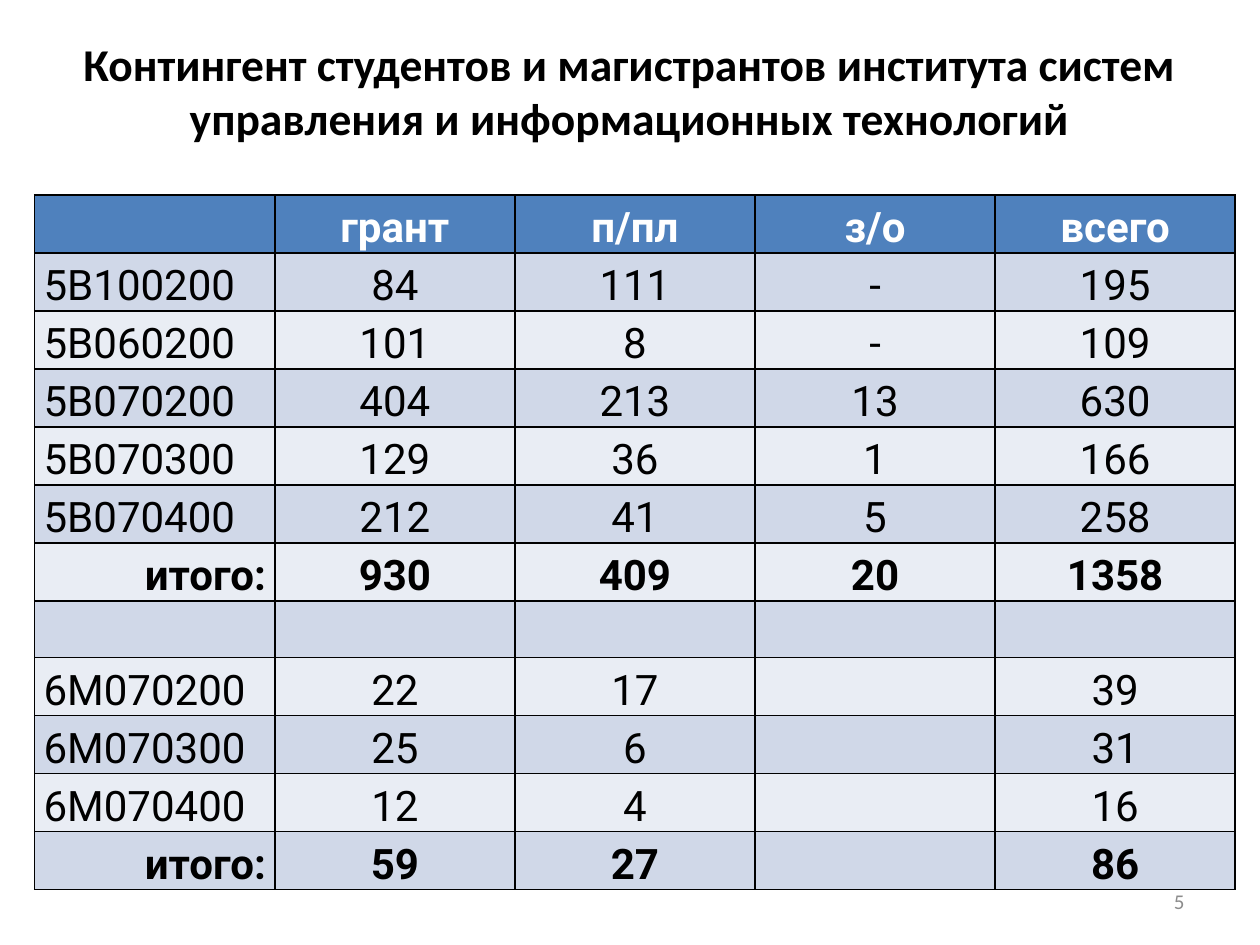
from lxml import etree
from pptx import Presentation
from pptx.dml.color import RGBColor
from pptx.enum.text import MSO_ANCHOR, PP_ALIGN
from pptx.oxml.ns import qn
from pptx.util import Cm, Pt

LEFT, CENTER, RIGHT = PP_ALIGN.LEFT, PP_ALIGN.CENTER, PP_ALIGN.RIGHT
MIDDLE, BOTTOM = MSO_ANCHOR.MIDDLE, MSO_ANCHOR.BOTTOM
BLACK = RGBColor(0x00, 0x00, 0x00)
WHITE = RGBColor(0xFF, 0xFF, 0xFF)
GRAY = RGBColor(0x8C, 0x8C, 0x8C)
HEADER_BLUE = RGBColor(0x4F, 0x81, 0xBD)
BAND_DARK = RGBColor(0xD0, 0xD8, 0xE8)
BAND_LIGHT = RGBColor(0xE9, 0xED, 0xF4)

TOTAL = "итого:"
ROWS = [
    ("", "грант", "п/пл", "з/о", "всего"),
    ("5В100200", "84", "111", "-", "195"),
    ("5В060200", "101", "8", "-", "109"),
    ("5В070200", "404", "213", "13", "630"),
    ("5В070300", "129", "36", "1", "166"),
    ("5В070400", "212", "41", "5", "258"),
    (TOTAL, "930", "409", "20", "1358"),
    ("", "", "", "", ""),
    ("6М070200", "22", "17", "", "39"),
    ("6М070300", "25", "6", "", "31"),
    ("6М070400", "12", "4", "", "16"),
    (TOTAL, "59", "27", "", "86"),
]
COLUMN_WIDTH = Cm(4.84)
ROW_HEIGHT = Cm(1.14)


def write(frame, text, align, font, size, color, bold=False):
    para = frame.paragraphs[0]
    para.alignment = align
    span = para.add_run()
    span.text = text
    span.font.name = font
    span.font.size = Pt(size)
    span.font.color.rgb = color
    span.font.bold = bold
    return para


def add_borders(cell):
    properties = cell._tc.get_or_add_tcPr()
    for index, side in enumerate(("a:lnL", "a:lnR", "a:lnT", "a:lnB")):
        line = etree.Element(qn(side), w=str(Pt(1)))
        fill = etree.SubElement(line, qn("a:solidFill"))
        etree.SubElement(fill, qn("a:srgbClr"), val=str(BLACK))
        properties.insert(index, line)


deck = Presentation()
deck.slide_width = Cm(25.4)
deck.slide_height = Cm(19.05)
page = deck.slides.add_slide(deck.slide_layouts[6])

title_box = page.shapes.add_textbox(Cm(1.27), Cm(0.53), Cm(22.86), Cm(2.59))
title_box.text_frame.word_wrap = True
title_box.text_frame.vertical_anchor = MIDDLE
title = "Контингент студентов и магистрантов института систем управления и информационных технологий"
write(title_box.text_frame, title, CENTER, "Calibri", 26, BLACK, True)

table = page.shapes.add_table(
    len(ROWS), len(ROWS[0]), Cm(0.7), Cm(3.93),
    COLUMN_WIDTH * len(ROWS[0]), ROW_HEIGHT * len(ROWS),
).table
for column in table.columns:
    column.width = COLUMN_WIDTH

for row_index, values in enumerate(ROWS):
    table.rows[row_index].height = ROW_HEIGHT
    is_header = row_index == 0
    is_total = values[0] == TOTAL
    band = BAND_DARK if row_index % 2 else BAND_LIGHT
    for column_index, value in enumerate(values):
        cell = table.cell(row_index, column_index)
        cell.fill.solid()
        cell.fill.fore_color.rgb = HEADER_BLUE if is_header else band
        cell.vertical_anchor = BOTTOM
        cell.margin_left = cell.margin_right = Cm(0.18)
        cell.margin_top = cell.margin_bottom = 0
        add_borders(cell)
        if value:
            label_align = RIGHT if is_total else LEFT
            para = write(
                cell.text_frame, value, CENTER if column_index else label_align,
                "Roboto", 24, WHITE if is_header else BLACK, is_header or is_total,
            )
            para.line_spacing = 1.15

number_box = page.shapes.add_textbox(Cm(18.2), Cm(17.65), Cm(5.93), Cm(1.02))
number_box.text_frame.word_wrap = True
number_box.text_frame.vertical_anchor = MIDDLE
write(number_box.text_frame, "5", RIGHT, "Calibri", 12, GRAY)

deck.save("out.pptx")
